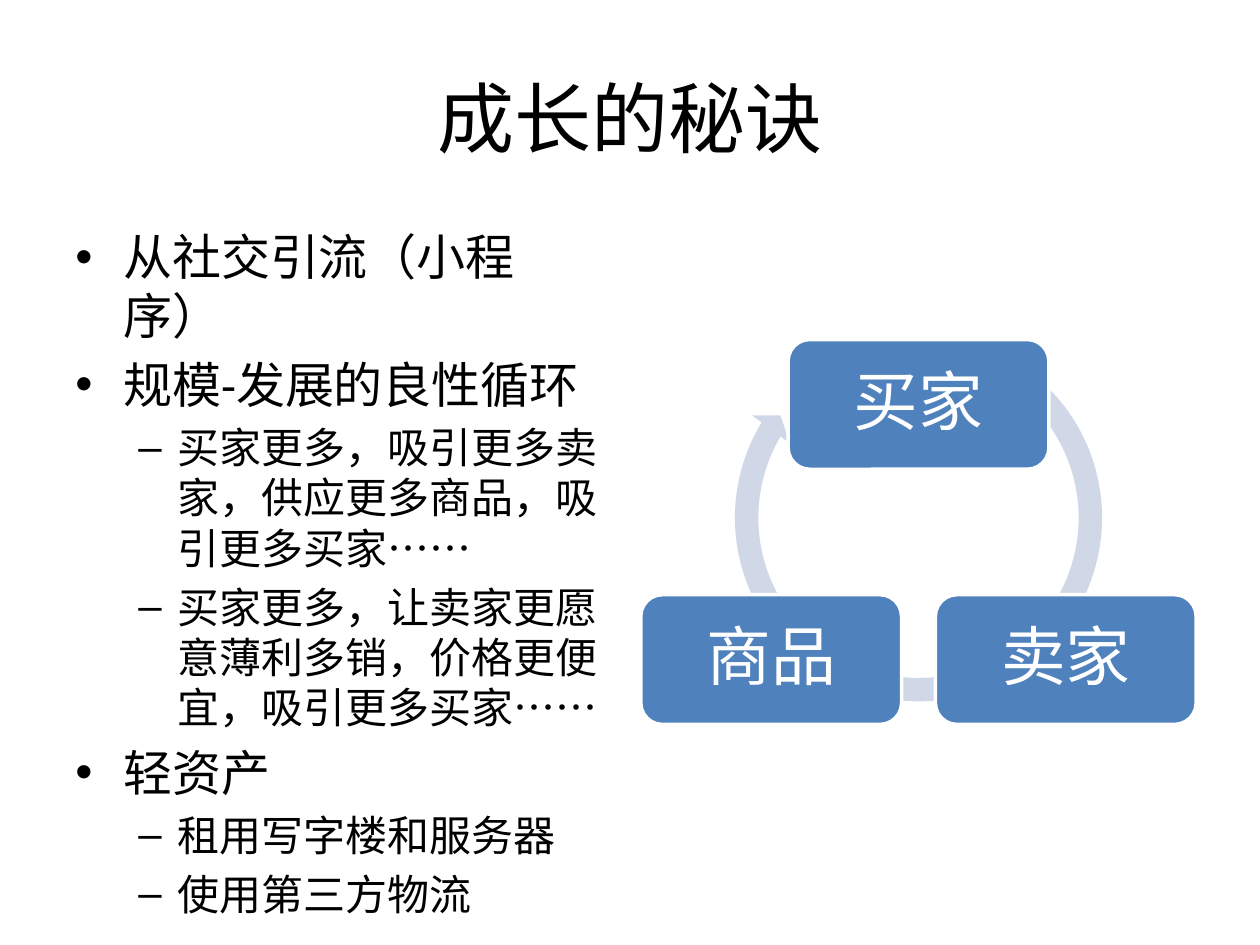
import math

from lxml import etree
from pptx import Presentation
from pptx.dml.color import RGBColor
from pptx.enum.shapes import MSO_SHAPE
from pptx.enum.text import MSO_ANCHOR, PP_ALIGN
from pptx.oxml.ns import qn
from pptx.util import Inches, Pt

ROUND_RECT = MSO_SHAPE.ROUNDED_RECTANGLE
CIRCULAR_ARROW = MSO_SHAPE.CIRCULAR_ARROW
MIDDLE = MSO_ANCHOR.MIDDLE
TOP = MSO_ANCHOR.TOP
CENTER = PP_ALIGN.CENTER


class Theme:
    font = "Calibri"
    text = RGBColor(0x00, 0x00, 0x00)
    white = RGBColor(0xFF, 0xFF, 0xFF)
    node = RGBColor(0x4F, 0x81, 0xBD)
    ring = RGBColor(0xD0, 0xD8, 0xE8)
    title_size = 44
    node_size = 37
    levels = [
        {"size": 28, "bullet": "•", "left": 0.38, "hang": 0.38},
        {"size": 24, "bullet": "–", "left": 0.81, "hang": 0.31},
    ]


class SlideBuilder:
    def __init__(self, s, theme):
        self.s = s
        self.theme = theme

    def add_text(self, p, text, size, color):
        r = p.add_run()
        r.text = text
        r.font.color.rgb = color
        formats = {"name": self.theme.font, "size": Pt(size)}
        for name, value in formats.items():
            setattr(r.font, name, value)

    def text_box(self, left, top, width, height, anchor):
        sp = self.s.shapes.add_textbox(*map(Inches, (left, top, width, height)))
        tf = sp.text_frame
        tf.word_wrap = True
        tf.vertical_anchor = anchor
        return tf

    def title(self, text, *box):
        p = self.text_box(*box, MIDDLE).paragraphs[0]
        p.alignment = CENTER
        self.add_text(p, text, self.theme.title_size, self.theme.text)

    def bullets(self, items, *box):
        tf = self.text_box(*box, TOP)
        for i, (level, text) in enumerate(items):
            p = tf.add_paragraph() if i else tf.paragraphs[0]
            style = self.theme.levels[level]
            p.level = level
            if i:
                p.space_before = Pt(style["size"] * 0.2)
            pPr = p._p.get_or_add_pPr()
            pPr.set("marL", str(Inches(style["left"])))
            pPr.set("indent", str(-Inches(style["hang"])))
            etree.SubElement(pPr, qn("a:buFont")).set("typeface", "Arial")
            etree.SubElement(pPr, qn("a:buChar")).set("char", style["bullet"])
            self.add_text(p, text, style["size"], self.theme.text)

    def shape(self, kind, left, top, width, height, fill):
        sp = self.s.shapes.add_shape(kind, *map(Inches, (left, top, width, height)))
        sp.shadow.inherit = False
        sp.fill.solid()
        sp.fill.fore_color.rgb = fill
        sp.line.fill.background()
        return sp

    def ring(self, cx, cy, size, adjustments):
        sp = self.shape(CIRCULAR_ARROW, cx - size / 2, cy - size / 2,
                        size, size, self.theme.ring)
        for i, value in enumerate(adjustments):
            sp.adjustments[i] = value

    def node(self, text, cx, cy, width, height):
        sp = self.shape(ROUND_RECT, cx - width / 2, cy - height / 2,
                        width, height, self.theme.node)
        sp.line.color.rgb = self.theme.white
        sp.line.width = Pt(2)
        tf = sp.text_frame
        formats = {"word_wrap": True, "vertical_anchor": MIDDLE}
        for side in ("left", "top", "right", "bottom"):
            formats["margin_" + side] = Inches(0.2)
        for name, value in formats.items():
            setattr(tf, name, value)
        p = tf.paragraphs[0]
        p.alignment = CENTER
        p.line_spacing = 0.9
        self.add_text(p, text, self.theme.node_size, self.theme.white)

    def cycle(self, labels, cx, cy, radius):
        for i, label in enumerate(labels):
            angle = math.tau * i / len(labels)
            self.node(label, cx + radius * math.sin(angle),
                      cy - radius * math.cos(angle), 2.07, 1.03)


def main():
    prs = Presentation()
    prs.slide_width = Inches(10)
    prs.slide_height = Inches(7.5)
    s = prs.slides.add_slide(prs.slide_layouts[6])
    builder = SlideBuilder(s, Theme)

    builder.title("成长的秘诀", 0.5, 0.3, 9, 1.25)
    builder.bullets([
        (0, "从社交引流（小程序）"),
        (0, "规模-发展的良性循环"),
        (1, "买家更多，吸引更多卖家，供应更多商品，吸引更多买家……"),
        (1, "买家更多，让卖家更愿意薄利多销，价格更便宜，吸引更多买家……"),
        (0, "轻资产"),
        (1, "租用写字楼和服务器"),
        (1, "使用第三方物流"),
    ], 0.5, 1.75, 4.42, 4.95)

    builder.ring(7.29, 4.11, 3.1, [0.06, 3.41, 126.55, 181.06, 0.06])
    builder.cycle(["买家", "卖家", "商品"], 7.29, 4.56, 1.35)

    prs.save("out.pptx")


if __name__ == "__main__":
    main()
